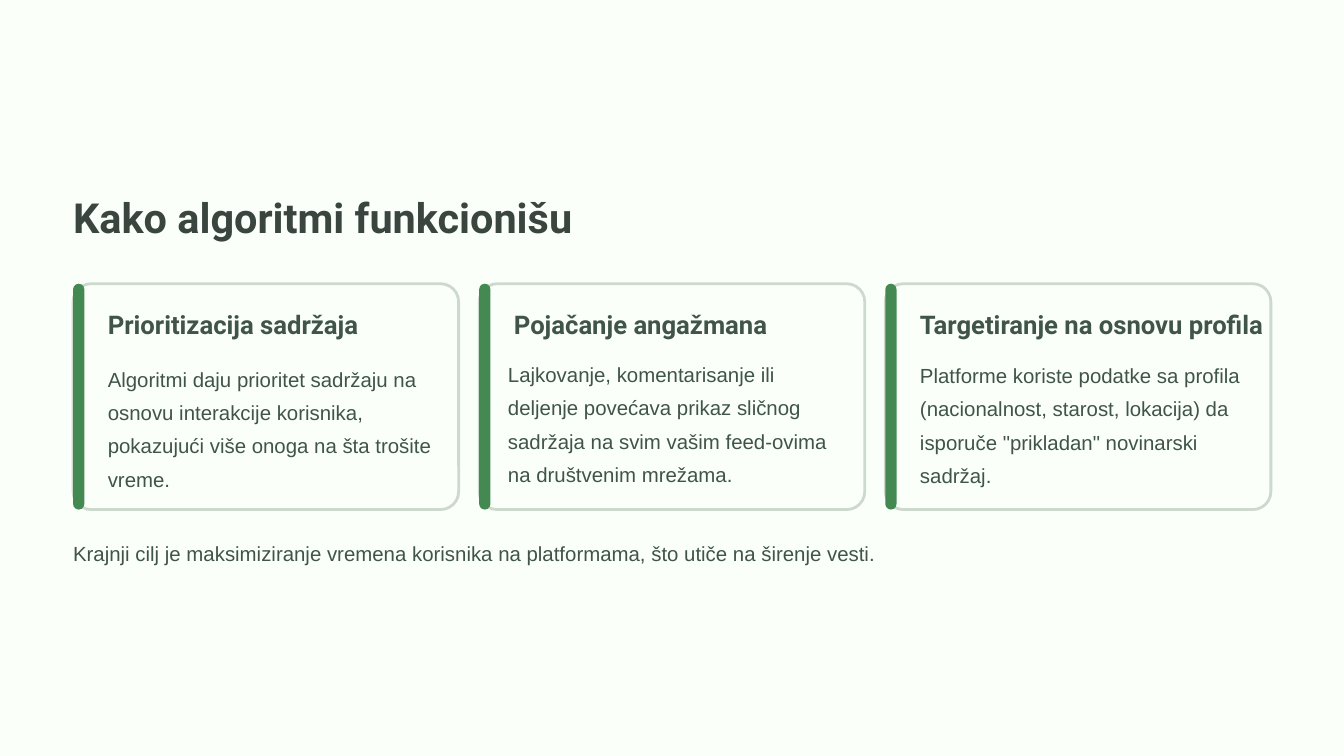
from pptx import Presentation
from pptx.dml.color import RGBColor
from pptx.enum.shapes import MSO_SHAPE
from pptx.util import Cm, Pt

ROUND = MSO_SHAPE.ROUNDED_RECTANGLE
COLORS = {
    "back": "FAFFFA",
    "edge": "CED9CE",
    "bar": "438951",
    "title": "3B4540",
    "text": "405449",
}
LEFT, TOP = 2.21, 8.58
CARD_W, CARD_H, PITCH = 11.66, 6.83, 12.28
BAR_W = 0.34
INDENT = 1.05

# heading, body, body indent, body top
CARDS = [
    ("Prioritizacija sadržaja",
     "Algoritmi daju prioritet sadržaju na osnovu interakcije korisnika, "
     "pokazujući više onoga na šta trošite vreme.", INDENT, 10.83),
    ("Pojačanje angažmana",
     "Lajkovanje, komentarisanje ili deljenje povećava prikaz sličnog "
     "sadržaja na svim vašim feed-ovima na društvenim mrežama.", 0.87, 10.69),
    ("Targetiranje na osnovu profila",
     "Platforme koriste podatke sa profila (nacionalnost, starost, lokacija) "
     'da isporuče "prikladan" novinarski sadržaj.', INDENT, 10.72),
]

deck = Presentation()
deck.slide_width, deck.slide_height = Cm(40.64), Cm(22.86)
slide = deck.slides.add_slide(deck.slide_layouts[6])


def color(name):
    return RGBColor.from_string(COLORS[name])


def add_text(text, x, y, w, h, size, lead, font="Arial", tint="text"):
    """Add a one-paragraph box without margins; Roboto text is bold."""
    frame = slide.shapes.add_textbox(Cm(x), Cm(y), Cm(w), Cm(h)).text_frame
    frame.word_wrap = True
    frame.margin_left = frame.margin_right = 0
    frame.margin_top = frame.margin_bottom = 0
    para = frame.paragraphs[0]
    para.text = text
    para.line_spacing = Pt(lead)
    para.font.name, para.font.size = font, Pt(size)
    para.font.bold = font == "Roboto"
    para.font.color.rgb = color(tint)


slide.background.fill.solid()
slide.background.fill.fore_color.rgb = color("back")

add_text("Kako algoritmi funkcionišu", LEFT, 5.74, 16.5, 1.57, 35.5, 44.5,
         "Roboto", "title")

for i, (head, body, indent, top) in enumerate(CARDS):
    x = LEFT + i * PITCH
    for width, fill, curve in ((CARD_W, "back", 0.08), (BAR_W, "bar", 0.5)):
        box = slide.shapes.add_shape(ROUND, Cm(x), Cm(TOP), Cm(width), Cm(CARD_H))
        box.shadow.inherit = False
        box.adjustments[0] = curve
        box.fill.solid()
        box.fill.fore_color.rgb = color(fill)
        if fill == "back":
            box.line.color.rgb = color("edge")
            box.line.width = Pt(2.4)
        else:
            box.line.fill.background()
    add_text(head, x + INDENT, 9.3, CARD_W - INDENT, 0.99, 22, 27.5, "Roboto")
    add_text(body, x + indent, top, 9.88, 4.04, 17.5, 28.5)

add_text("Krajnji cilj je maksimiziranje vremena korisnika na platformama, "
         "što utiče na širenje vesti.", LEFT, 16.1, 36.22, 1.02, 17.5, 28.5)

deck.save("out.pptx")
